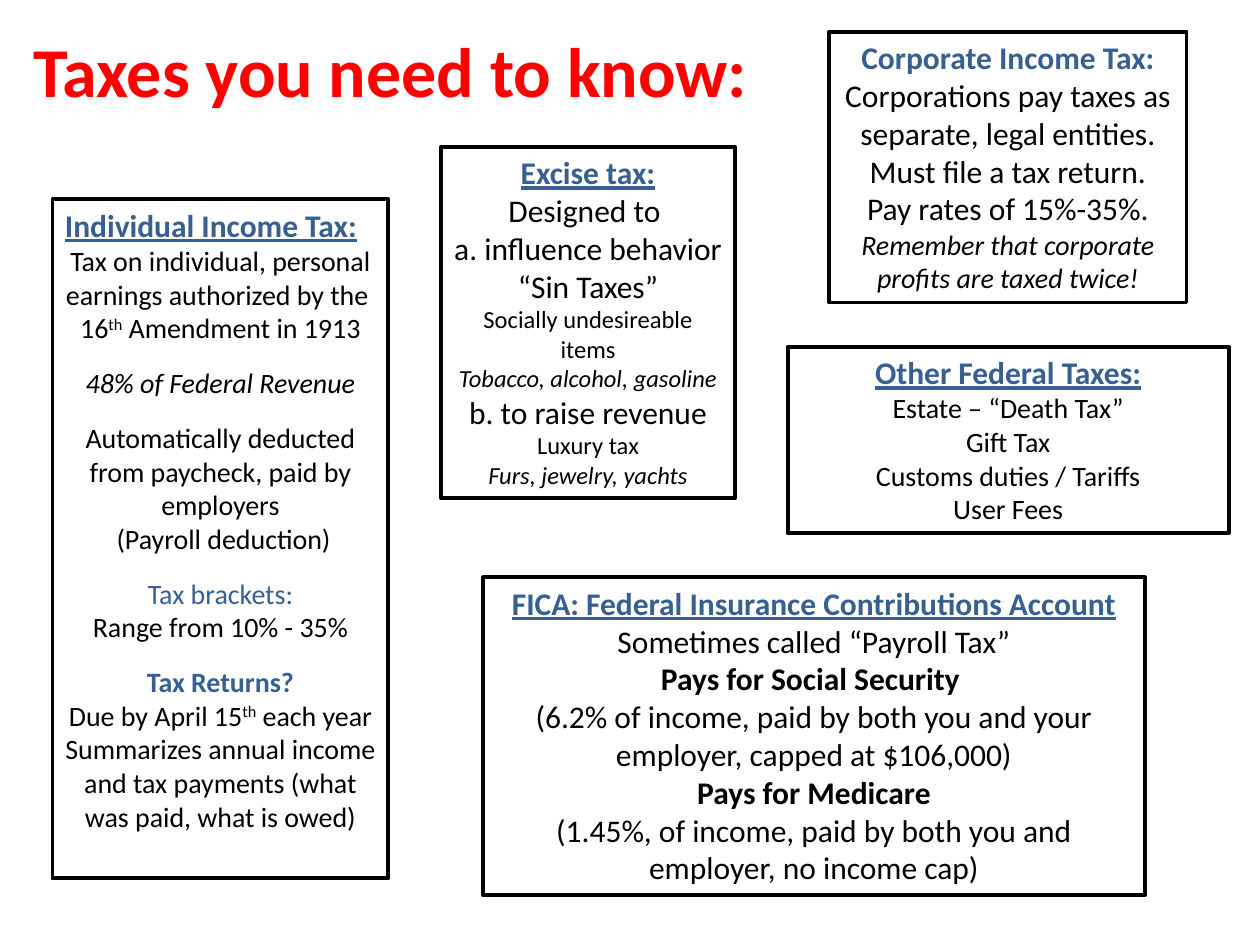
from dataclasses import dataclass

from pptx import Presentation
from pptx.dml.color import RGBColor
from pptx.enum.shapes import MSO_SHAPE
from pptx.enum.text import MSO_ANCHOR, MSO_AUTO_SIZE, PP_ALIGN
from pptx.util import Cm, Pt

RECTANGLE = MSO_SHAPE.RECTANGLE
TOP = MSO_ANCHOR.TOP
NO_AUTOFIT = MSO_AUTO_SIZE.NONE
LEFT, CENTER = PP_ALIGN.LEFT, PP_ALIGN.CENTER
TITLE_ONLY = 5


@dataclass(frozen=True)
class Theme:
    font: str = "Calibri"
    red: RGBColor = RGBColor(0xFF, 0x00, 0x00)
    blue: RGBColor = RGBColor(0x37, 0x60, 0x92)
    black: RGBColor = RGBColor(0x00, 0x00, 0x00)
    white: RGBColor = RGBColor(0xFF, 0xFF, 0xFF)
    title: int = 40
    large: int = 18
    medium: int = 16
    small: int = 14
    border: float = 2.25
    gap: float = 12.2


THEME = Theme()


@dataclass(frozen=True)
class Style:
    size: int
    color: RGBColor = THEME.black
    bold: bool = False
    italic: bool = False
    underline: bool = False
    superscript: bool = False


TITLE = Style(THEME.title, THEME.red, bold=True)
HEADING = Style(THEME.large, THEME.blue, bold=True, underline=True)
PLAIN_HEADING = Style(THEME.large, THEME.blue, bold=True)
LARGE = Style(THEME.large)
LARGE_BOLD = Style(THEME.large, bold=True)
MEDIUM = Style(THEME.medium)
MEDIUM_ITALIC = Style(THEME.medium, italic=True)
MEDIUM_BLUE = Style(THEME.medium, THEME.blue)
MEDIUM_BLUE_BOLD = Style(THEME.medium, THEME.blue, bold=True)
ORDINAL = Style(THEME.medium, superscript=True)
SMALL = Style(THEME.small)
SMALL_ITALIC = Style(THEME.small, italic=True)


@dataclass(frozen=True)
class Line:
    runs: list
    align: PP_ALIGN = CENTER
    gap_before: bool = False


def line(style, text, **layout):
    return Line([(style, text)], **layout)


class SlideBuilder:
    def __init__(self, slide, theme):
        self.slide = slide
        self.theme = theme

    def fill_text(self, frame, lines):
        frame.word_wrap = True
        frame.auto_size = NO_AUTOFIT
        frame.vertical_anchor = TOP
        frame.margin_left = frame.margin_right = Cm(0.25)
        frame.margin_top = frame.margin_bottom = Cm(0.13)
        for index, content in enumerate(lines):
            paragraph = frame.add_paragraph() if index else frame.paragraphs[0]
            paragraph.alignment = content.align
            if content.gap_before:
                paragraph.space_before = Pt(self.theme.gap)
            for style, text in content.runs:
                self.add_run(paragraph, style, text)

    def add_run(self, paragraph, style, text):
        run = paragraph.add_run()
        run.text = text
        font = run.font
        font.name = self.theme.font
        font.size = Pt(style.size)
        font.color.rgb = style.color
        font.bold = style.bold
        font.italic = style.italic
        font.underline = style.underline
        if style.superscript:
            run._r.get_or_add_rPr().set("baseline", "30000")

    def title(self, text, left, top, width, height):
        title = self.slide.shapes.title
        title.left, title.top = Cm(left), Cm(top)
        title.width, title.height = Cm(width), Cm(height)
        self.fill_text(title.text_frame, [line(TITLE, text, align=LEFT)])

    def tax_box(self, left, top, width, height, lines):
        box = self.slide.shapes.add_shape(
            RECTANGLE, Cm(left), Cm(top), Cm(width), Cm(height))
        box.shadow.inherit = False
        box.fill.background()
        box.line.color.rgb = self.theme.black
        box.line.width = Pt(self.theme.border)
        self.fill_text(box.text_frame, lines)


def main():
    deck = Presentation()
    deck.slide_width, deck.slide_height = Cm(25.4), Cm(19.05)
    slide = deck.slides.add_slide(deck.slide_layouts[TITLE_ONLY])
    slide.background.fill.solid()
    slide.background.fill.fore_color.rgb = THEME.white
    builder = SlideBuilder(slide, THEME)

    builder.title("Taxes you need to know:", 0.42, 0.42, 15.04, 1.97)

    # Excise tax
    builder.tax_box(8.89, 2.96, 5.93, 7.09, [
        line(HEADING, "Excise tax:"),
        line(LARGE, "Designed to "),
        line(LARGE, "a. influence behavior “Sin Taxes”"),
        line(SMALL, "Socially undesireable items"),
        line(SMALL_ITALIC, "Tobacco, alcohol, gasoline"),
        line(LARGE, "b. to raise revenue"),
        line(SMALL, "Luxury tax"),
        line(SMALL_ITALIC, "Furs, jewelry, yachts"),
    ])

    # Individual income tax
    builder.tax_box(1.06, 4.02, 6.77, 13.69, [
        line(HEADING, "Individual Income Tax:", align=LEFT),
        line(MEDIUM, "Tax on individual, personal earnings authorized by the "),
        Line([(MEDIUM, "16"), (ORDINAL, "th"), (MEDIUM, " Amendment in 1913")]),
        line(MEDIUM_ITALIC, "48% of Federal Revenue", gap_before=True),
        line(MEDIUM, "Automatically deducted from paycheck, paid by employers",
             gap_before=True),
        line(MEDIUM, " (Payroll deduction)"),
        line(MEDIUM_BLUE, "Tax brackets:", gap_before=True),
        line(MEDIUM, "Range from 10% - 35%"),
        line(MEDIUM_BLUE_BOLD, "Tax Returns?", gap_before=True),
        Line([(MEDIUM, "Due by April 15"), (ORDINAL, "th"), (MEDIUM, " each year")]),
        line(MEDIUM, "Summarizes annual income and tax payments "
                     "(what was paid, what is owed)"),
    ])

    # FICA
    builder.tax_box(9.74, 11.64, 13.34, 6.41, [
        line(HEADING, "FICA: Federal Insurance Contributions Account"),
        line(LARGE, "Sometimes called “Payroll Tax”"),
        line(LARGE_BOLD, "Pays for Social Security "),
        line(LARGE, "(6.2% of income, paid by both you and your employer, "
                    "capped at $106,000)"),
        line(LARGE_BOLD, "Pays for Medicare"),
        line(LARGE, "(1.45%, of income, paid by both you and employer, "
                    "no income cap)"),
    ])

    # Corporate income tax
    builder.tax_box(16.72, 0.64, 7.2, 5.46, [
        line(PLAIN_HEADING, "Corporate Income Tax:"),
        line(LARGE, "Corporations pay taxes as separate, legal entities."),
        line(LARGE, "Must file a tax return."),
        line(LARGE, "Pay rates of 15%-35%."),
        line(MEDIUM_ITALIC, "Remember that corporate profits are taxed twice!"),
    ])

    # Other federal taxes
    builder.tax_box(15.88, 6.99, 8.89, 3.76, [
        line(HEADING, "Other Federal Taxes:"),
        line(MEDIUM, "Estate – “Death Tax”"),
        line(MEDIUM, "Gift Tax"),
        line(MEDIUM, "Customs duties / Tariffs"),
        line(MEDIUM, "User Fees"),
    ])

    deck.save("out.pptx")


if __name__ == "__main__":
    main()
